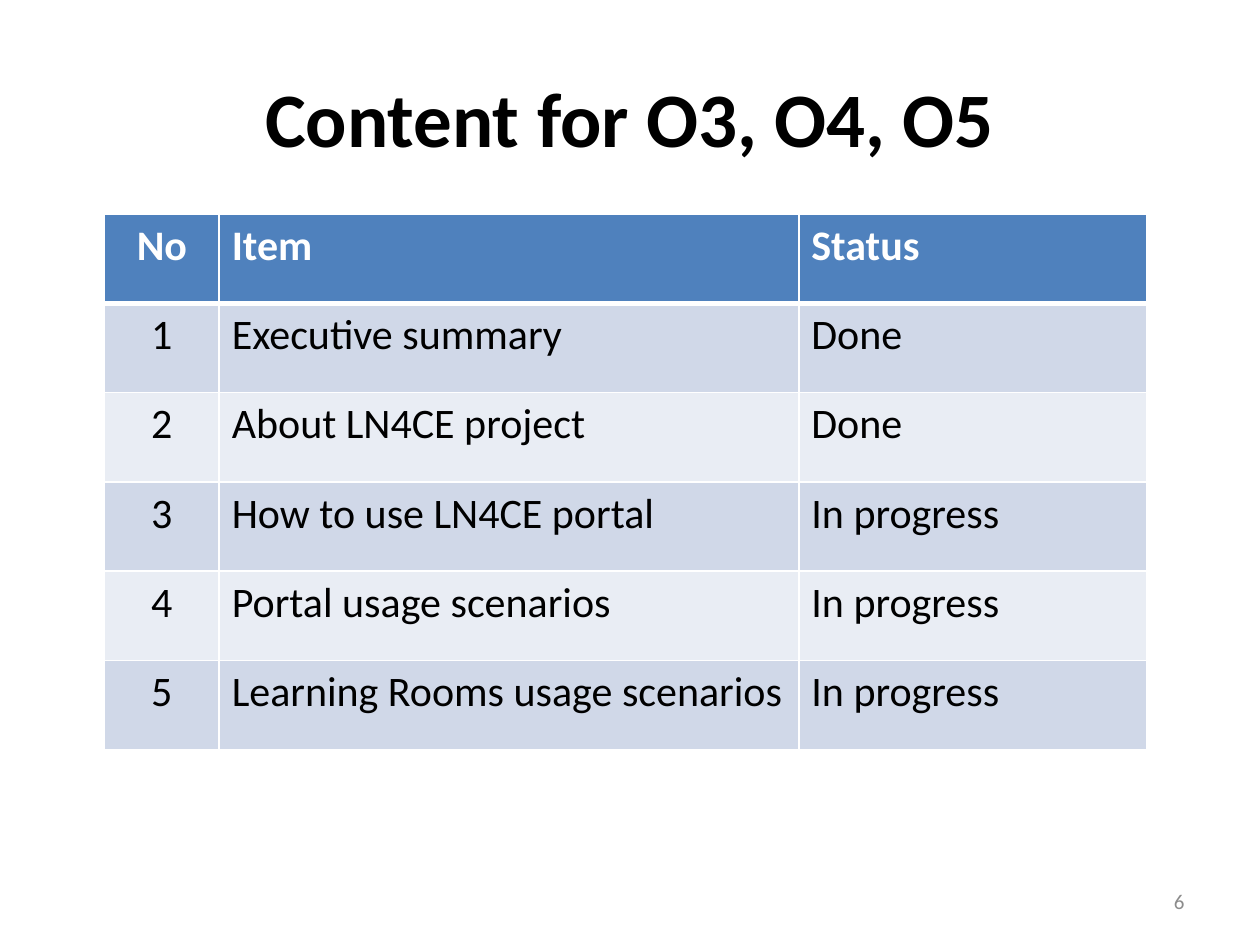
import pptx
import pptx.dml.color
import pptx.enum.text
import pptx.oxml
import pptx.oxml.ns
import pptx.util

Inches = pptx.util.Inches
Pt = pptx.util.Pt
RGBColor = pptx.dml.color.RGBColor
ALIGN = pptx.enum.text.PP_ALIGN
ANCHOR = pptx.enum.text.MSO_ANCHOR

BLACK = RGBColor(0x00, 0x00, 0x00)
WHITE = RGBColor(0xFF, 0xFF, 0xFF)
GREY = RGBColor(0x8C, 0x8C, 0x8C)
HEADER_BLUE = RGBColor(0x4F, 0x81, 0xBD)
BANDS = (RGBColor(0xD0, 0xD8, 0xE8), RGBColor(0xE9, 0xED, 0xF4))

CONTENT = [
    ("No", "Item", "Status"),
    ("1", "Executive summary", "Done"),
    ("2", "About LN4CE project", "Done"),
    ("3", "How to use LN4CE portal", "In progress"),
    ("4", "Portal usage scenarios", "In progress"),
    ("5", "Learning Rooms usage scenarios", "In progress"),
]


def write(frame, text, size=24, color=BLACK, bold=False, align=ALIGN.LEFT):
    paragraph = frame.paragraphs[0]
    paragraph.alignment = align
    run = paragraph.add_run()
    run.text = text
    run.font.name = "Calibri"
    run.font.size = Pt(size)
    run.font.bold = bold
    run.font.color.rgb = color


def set_borders(cell, color, **widths):
    """Draw cell borders; widths are points by side, in the order L, R, T, B."""
    properties = cell._tc.get_or_add_tcPr()
    for side, width in widths.items():
        properties.append(pptx.oxml.parse_xml(
            f'<a:ln{side} {pptx.oxml.ns.nsdecls("a")} w="{Pt(width)}">'
            f'<a:solidFill><a:srgbClr val="{color}"/></a:solidFill></a:ln{side}>'))


class StatusSlide:
    def __init__(self, presentation):
        self.slide = presentation.slides.add_slide(presentation.slide_layouts[5])

    def title(self, text, left, top, width, height):
        heading = self.slide.shapes.title
        heading.left, heading.top = Inches(left), Inches(top)
        heading.width, heading.height = Inches(width), Inches(height)
        heading.text_frame.vertical_anchor = ANCHOR.MIDDLE
        write(heading.text_frame, text, size=44, bold=True, align=ALIGN.CENTER)

    def page_number(self, text, left, top, width, height):
        number = self.slide.shapes.add_textbox(
            Inches(left), Inches(top), Inches(width), Inches(height))
        number.text_frame.word_wrap = True
        number.text_frame.vertical_anchor = ANCHOR.MIDDLE
        write(number.text_frame, text, size=12, color=GREY, align=ALIGN.RIGHT)

    def table(self, rows, left, top, column_widths, height):
        grid = self.slide.shapes.add_table(
            len(rows), len(column_widths), Inches(left), Inches(top),
            Inches(sum(column_widths)), Inches(height)).table
        for column, width in zip(grid.columns, column_widths):
            column.width = Inches(width)
        for r, row in enumerate(rows):
            header = r == 0
            for c, text in enumerate(row):
                cell = grid.cell(r, c)
                set_borders(cell, WHITE, L=1, R=1,
                            T=3 if r == 1 else 1, B=3 if header else 1)
                cell.fill.solid()
                cell.fill.fore_color.rgb = HEADER_BLUE if header else BANDS[(r - 1) % 2]
                write(cell.text_frame, text, bold=header,
                      color=WHITE if header else BLACK,
                      align=ALIGN.CENTER if c == 0 else ALIGN.LEFT)


def main():
    presentation = pptx.Presentation()
    presentation.slide_width, presentation.slide_height = Inches(10), Inches(7.5)
    status = StatusSlide(presentation)
    status.title("Content for O3, O4, O5", 0.5, 0.3, 9, 1.25)
    status.page_number("6", 7.17, 6.95, 2.33, 0.4)
    status.table(CONTENT, 0.83, 1.7, (0.91, 4.6, 2.76), 4.25)
    presentation.save("out.pptx")


if __name__ == "__main__":
    main()
